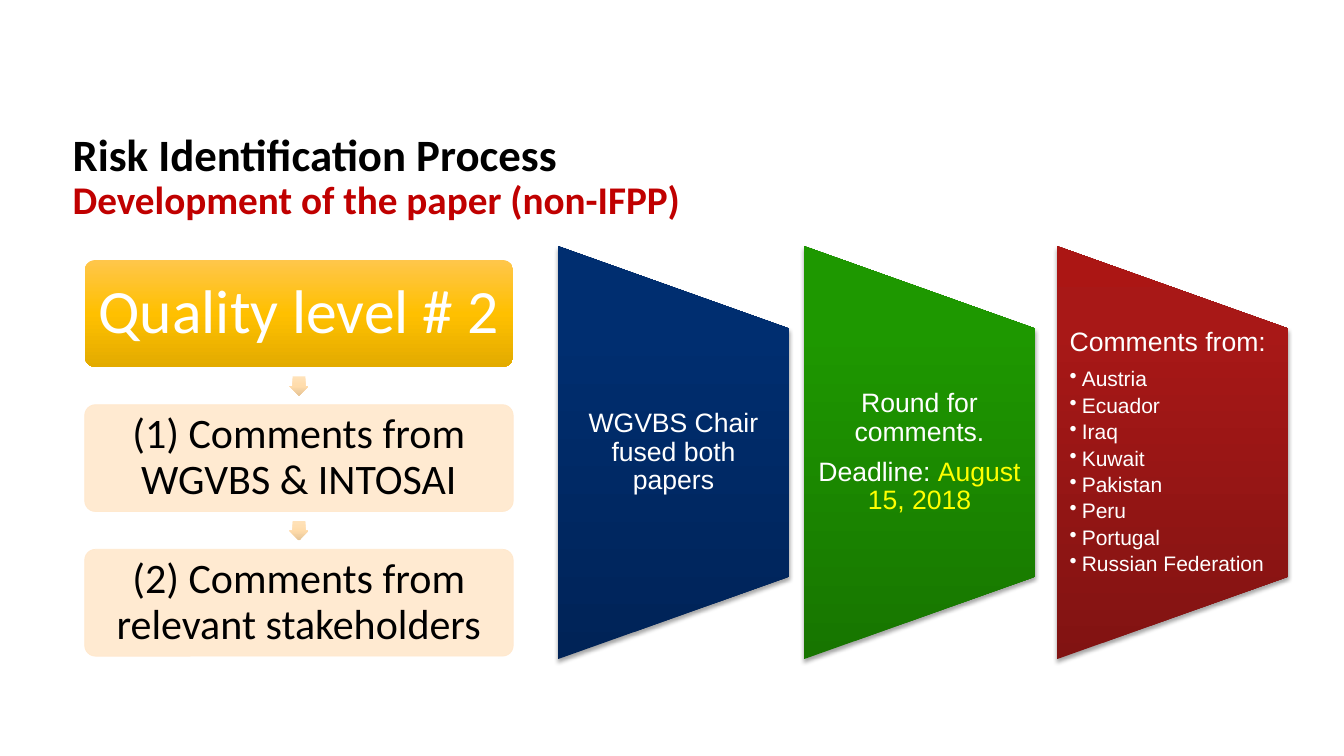
from lxml.etree import SubElement
from pptx import Presentation
from pptx.dml.color import RGBColor
from pptx.enum.shapes import MSO_SHAPE as SHAPE
from pptx.enum.text import MSO_ANCHOR as ANCHOR, MSO_AUTO_SIZE as AUTO, PP_ALIGN as ALIGN
from pptx.oxml.ns import qn
from pptx.util import Inches, Pt

BODY, HEAD = "Arial", "Calibri"
COUNTRIES = ["Austria", "Ecuador", "Iraq", "Kuwait", "Pakistan", "Peru",
             "Portugal", "Russian Federation"]


def rgb(value):
    return RGBColor.from_string(value)


def box(x, y, w, h):
    return [Inches(v) for v in (x, y, w, h)]


def add_run(p, text, size, color="FFFFFF", font=BODY, bold=False):
    r = p.add_run()
    r.text = text
    r.font.size, r.font.name, r.font.bold = Pt(size), font, bold
    r.font.color.rgb = rgb(color)


def add_text(tf, runs, first=False, align=ALIGN.CENTER, after=8, bullet=False, **fmt):
    """Add a paragraph of (text, color) runs sharing one format."""
    p = tf.paragraphs[0] if first else tf.add_paragraph()
    p.alignment, p.line_spacing, p.space_after = align, 0.9, Pt(after)
    if bullet:
        p.level = 1
        pPr = p._p.get_or_add_pPr()
        pPr.set("marL", str(Inches(0.12)))
        pPr.set("indent", str(Inches(-0.12)))
        SubElement(pPr, qn("a:buChar"), char="•")
    for text, color in runs:
        add_run(p, text, color=color, **fmt)


def set_frame(tf, anchor=ANCHOR.MIDDLE, side=0.1, top=0.05):
    tf.word_wrap, tf.auto_size, tf.vertical_anchor = True, AUTO.NONE, anchor
    tf.margin_left = tf.margin_right = Inches(side)
    tf.margin_top = tf.margin_bottom = Inches(top)


def set_gradient(shape, stops, angle):
    """Fill with (position, color) stops; the angle stays fixed when the shape turns."""
    shape.fill.gradient()
    shape.fill.gradient_angle = angle
    grad = shape._element.spPr.find(qn("a:gradFill"))
    grad.set("rotWithShape", "0")
    gs_list = grad.find(qn("a:gsLst"))
    for gs in list(gs_list):
        gs_list.remove(gs)
    for pos, color in stops:
        gs = SubElement(gs_list, qn("a:gs"), pos=str(pos * 1000))
        SubElement(gs, qn("a:srgbClr"), val=color)


def set_alpha(shape, percent):
    """Make the solid fill and line of a shape partly transparent."""
    for clr in shape._element.spPr.iter(qn("a:srgbClr")):
        SubElement(clr, qn("a:alpha"), val=str(percent * 1000))


def add_shadow(shape):
    effects = shape._element.spPr.find(qn("a:effectLst"))
    shadow = SubElement(effects, qn("a:outerShdw"), blurRad=str(Pt(3.1)),
                        dist=str(Pt(1.8)), dir="5400000", rotWithShape="0")
    clr = SubElement(shadow, qn("a:srgbClr"), val="000000")
    SubElement(clr, qn("a:alpha"), val="35000")


class ProcessSlide:
    gold = [(0, "FFC64B"), (50, "FFC000"), (100, "E3AB00")]
    sand = [(0, "FFE2B9"), (50, "FFDCAB"), (100, "E5C496")]
    pale = "FFE8CC"

    def __init__(self, prs):
        self.s = prs.slides.add_slide(prs.slide_layouts[5])

    def title(self, heading, subtitle):
        sp = self.s.shapes.title
        sp.left, sp.top, sp.width, sp.height = box(0.62, 1.09, 7.73, 1.35)
        set_frame(sp.text_frame)
        p = sp.text_frame.paragraphs[0]
        p.alignment, p.line_spacing = ALIGN.LEFT, 0.9
        add_run(p, heading, 32, "000000", HEAD, True)
        p.add_line_break()
        add_run(p, subtitle, 28, "C00000", HEAD, True)

    def shape(self, kind, x, y, w, h, rotation=0):
        sp = self.s.shapes.add_shape(kind, *box(x, y, w, h))
        sp.rotation = rotation
        sp.shadow.inherit = False
        sp.line.fill.background()
        return sp

    def card(self, y, text, size, color, inset, gradient=None):
        sp = self.shape(SHAPE.ROUNDED_RECTANGLE, 0.84, y, 4.25, 1.06)
        sp.adjustments[0] = 0.1
        if gradient:
            set_gradient(sp, gradient, 270)
        else:
            sp.fill.solid()
            sp.fill.fore_color.rgb = rgb(self.pale)
            sp.line.color.rgb = rgb(self.pale)
            sp.line.width = Pt(0.5)
            set_alpha(sp, 90)
        set_frame(sp.text_frame, side=inset, top=inset)
        add_text(sp.text_frame, [(text, color)], first=True, size=size, font=HEAD)

    def arrow(self, y):
        sp = self.shape(SHAPE.RIGHT_ARROW, 2.87, y, 0.19, 0.19, 90)
        sp.adjustments[0], sp.adjustments[1] = 0.667, 0.5
        set_gradient(sp, self.sand, 270)

    def panel(self, x, stops, anchor=ANCHOR.MIDDLE):
        """Draw a trapezoid standing on its side and return its text frame."""
        w, h = 4.1, 2.3
        sp = self.shape(SHAPE.FLOWCHART_MANUAL_OPERATION, x + (h - w) / 2, 3.34, w, h, 270)
        set_gradient(sp, stops, 90)
        add_shadow(sp)
        tf = self.s.shapes.add_textbox(*box(x, 3.26, h, 2.46)).text_frame
        set_frame(tf, anchor, side=0.13, top=0)
        return tf


def main():
    prs = Presentation()
    prs.slide_width, prs.slide_height = Inches(13.33), Inches(7.5)
    slide = ProcessSlide(prs)
    slide.title("Risk Identification Process", "Development of the paper (non-IFPP)")

    tf = slide.panel(5.53, [(0, "002357"), (80, "002E70"), (100, "002E71")])
    add_text(tf, [("WGVBS Chair fused both papers", "FFFFFF")], first=True, size=19)

    tf = slide.panel(7.97, [(0, "177500"), (80, "1E9800"), (100, "1E9800")])
    add_text(tf, [("Round for comments.", "FFFFFF")], first=True, size=19)
    add_text(tf, [("Deadline: ", "FFFFFF"), ("August 15, 2018", "FFFF00")], size=19)

    tf = slide.panel(10.48, [(0, "811312"), (80, "A81817"), (100, "AB1614")], ANCHOR.TOP)
    add_text(tf, [("Comments from:", "FFFFFF")], first=True, align=ALIGN.LEFT, size=19)
    for country in COUNTRIES:
        add_text(tf, [(country, "FFFFFF")], align=ALIGN.LEFT, after=2.7, bullet=True, size=15)

    top, step = 2.58, 1.435
    slide.card(top, "Quality level # 2", 44, "FFFFFF", 0.06, slide.gold)
    steps = ["(1) Comments from WGVBS & INTOSAI", "(2) Comments from relevant stakeholders"]
    for i, text in enumerate(steps, 1):
        y = top + i * step
        slide.arrow(y - 0.28)
        slide.card(y, text, 30, "000000", 0.04)

    prs.save("out.pptx")


if __name__ == "__main__":
    main()
